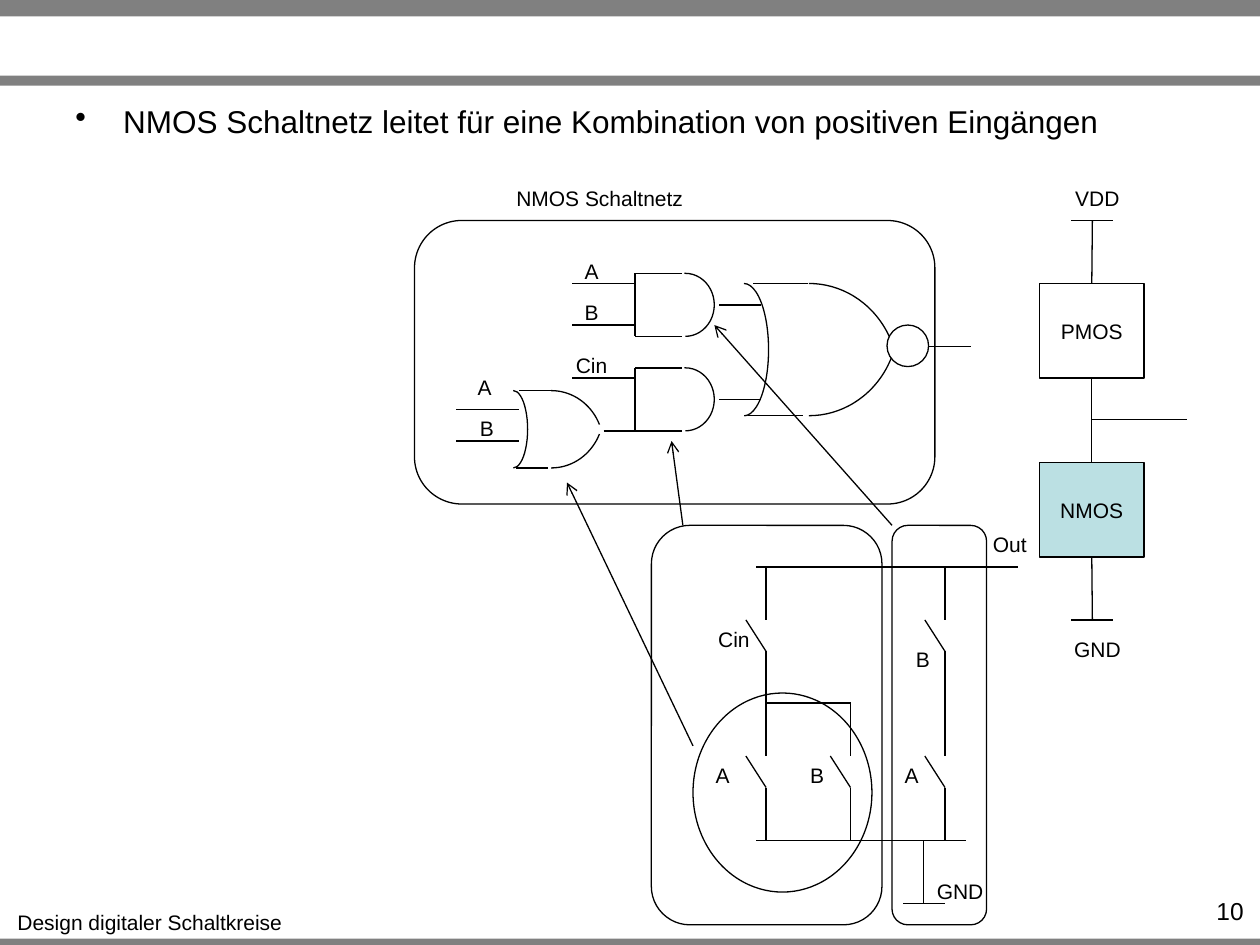
from lxml import etree
from pptx import Presentation
from pptx.dml.color import RGBColor
from pptx.enum.shapes import MSO_CONNECTOR, MSO_SHAPE as SHAPE
from pptx.enum.text import MSO_ANCHOR, PP_ALIGN as ALIGN
from pptx.oxml.ns import qn
from pptx.util import Inches, Pt

COLORS = {"ink": "000000", "bar": "808080", "paper": "FFFFFF", "highlight": "BBE0E3"}
FONT = "Arial"

BULLET = "NMOS Schaltnetz leitet für eine Kombination von positiven Eingängen"
BARS = [(0, 0.13), (0.6, 0.08), (7.45, 0.08)]  # top, height

# text, left, top, width
LABELS = [
    ("Design digitaler Schaltkreise", 0.03, 7.17, 2.32),
    ("NMOS Schaltnetz", 3.99, 1.42, 1.54),
    ("A", 4.54, 2, 0.31), ("B", 4.54, 2.33, 0.31), ("Cin", 4.47, 2.75, 0.45),
    ("A", 3.69, 2.92, 0.31), ("B", 3.71, 3.25, 0.31),
    ("A", 5.58, 6, 0.31), ("B", 6.33, 6, 0.31), ("Cin", 5.6, 4.92, 0.45),
    ("A", 7.08, 6, 0.31), ("B", 7.17, 5.08, 0.31),
    ("Out", 7.78, 4.17, 0.47), ("GND", 7.33, 6.92, 0.58),
    ("VDD", 8.43, 1.42, 0.56), ("GND", 8.42, 5, 0.58),
]

AND_GATES = [(5.04, 2.17), (5.04, 2.92)]  # left, top
OR_GATES = [(5.71, 2.25, 1), (3.96, 3.1, 0.585)]  # left, top, scale
SWITCHES = [(6.08, 4.92), (6.08, 6), (6.75, 6), (7.5, 4.92), (7.5, 6)]

# left, right, y
HORIZONTAL_WIRES = [
    (4.54, 5.04, 2.25), (4.54, 5.04, 2.58), (4.54, 5.04, 3),  # AND inputs
    (3.62, 4.12, 3.25), (3.62, 4.12, 3.5),  # OR inputs
    (4.79, 5.04, 3.42), (5.71, 6.04, 2.42), (5.71, 6.04, 3.17),  # between gates
    (7.37, 7.71, 2.75),  # gate output
    (6, 8.08, 4.5), (6.08, 6.75, 5.58), (6, 7.67, 6.67), (7.17, 7.5, 7.17),
    (8.5, 8.83, 1.75), (8.67, 9.42, 3.33), (8.5, 8.83, 4.92),  # inverter stack
]

FRAMES = [
    (SHAPE.ROUNDED_RECTANGLE, 3.29, 1.75, 4.13, 2.25),
    (SHAPE.OVAL, 5.5, 5.5, 1.42, 1.58),
    (SHAPE.ROUNDED_RECTANGLE, 5.17, 4.17, 1.83, 3.17),
    (SHAPE.ROUNDED_RECTANGLE, 7.08, 4.17, 0.75, 3.17),
]
ARROWS = [(5.5, 5.92, 4.5, 3.83), (5.42, 4.17, 5.33, 3.5), (7.08, 4.17, 5.67, 2.58)]

presentation = Presentation()
presentation.slide_width, presentation.slide_height = Inches(10), Inches(7.5)
slide = presentation.slides.add_slide(presentation.slide_layouts[6])


def color(name):
    return RGBColor.from_string(COLORS[name])


def style_text(paragraph, size, align):
    paragraph.alignment = align
    paragraph.font.name = FONT
    paragraph.font.size = Pt(size)
    paragraph.font.color.rgb = color("ink")


def add_text(text, left, top, width, height=0.3, size=12, align=ALIGN.CENTER, wrap=False):
    box = slide.shapes.add_textbox(*map(Inches, (left, top, width, height)))
    box.text_frame.word_wrap = wrap
    paragraph = box.text_frame.paragraphs[0]
    paragraph.text = text
    style_text(paragraph, size, align)
    return paragraph


def add_shape(kind, left, top, width, height, fill=None, outlined=True):
    shape = slide.shapes.add_shape(kind, *map(Inches, (left, top, width, height)))
    shape.shadow.inherit = False
    if fill:
        shape.fill.solid()
        shape.fill.fore_color.rgb = color(fill)
    else:
        shape.fill.background()
    if outlined:
        shape.line.color.rgb = color("ink")
        shape.line.width = Pt(0.75)
    else:
        shape.line.fill.background()
    return shape


def add_arc(left, top, width, height, end, flipped=False):
    arc = add_shape(SHAPE.ARC, left, top, width, height)
    arc.adjustments[0], arc.adjustments[1] = 162, end
    if flipped:
        arc.element.spPr.find(qn("a:xfrm")).set("flipV", "1")


def add_line(x1, y1, x2, y2, arrow=False):
    line = slide.shapes.add_connector(MSO_CONNECTOR.STRAIGHT, *map(Inches, (x1, y1, x2, y2)))
    line.line.color.rgb = color("ink")
    line.line.width = Pt(0.75)
    if arrow:
        etree.SubElement(line.line._get_or_add_ln(), qn("a:tailEnd"), type="arrow")
    etree.SubElement(line.element.spPr, qn("a:effectLst"))
    return line


def add_and_gate(left, top):
    for y in (top, top + 0.5):
        add_line(left, y, left + 0.37, y)
    add_line(left, top, left, top + 0.5)
    add_arc(left + 0.17, top, 0.46, 0.5, 54.9, flipped=True)


def add_or_gate(left, top, scale):
    height, front_width, front_height = 1.05 * scale, 1.42 * scale, 1.5 * scale
    bottom = top + height
    add_arc(left, top, 0.39 * scale, height, 53.88)
    add_arc(left, top, front_width, front_height, 201.69)
    add_arc(left, bottom - front_height, front_width, front_height, 201.69, flipped=True)
    for start, end, y in ((0.27, 0.7, top), (0.23, 0.66, bottom)):
        add_line(left + start * scale, y, left + end * scale, y)


def add_switch(x, top):
    pivot = top + 0.25
    add_line(x, top - 0.42, x, top)
    add_line(x, pivot, x - 0.16, top)
    add_line(x, pivot, x, pivot + 0.42)


def add_block(text, top, fill=None):
    block = add_shape(SHAPE.RECTANGLE, 8.25, top, 0.83, 0.75, fill)
    block.text_frame.vertical_anchor = MSO_ANCHOR.MIDDLE
    paragraph = block.text_frame.paragraphs[0]
    paragraph.text = text
    style_text(paragraph, 12, ALIGN.CENTER)
    return block


# Bars, bullet and page number
for top, height in BARS:
    add_shape(SHAPE.RECTANGLE, 0, top, 10, height, "bar", outlined=False)

bullet = add_text(BULLET, 0.5, 0.76, 9, 0.74, 18, ALIGN.LEFT, wrap=True)
properties = bullet._p.get_or_add_pPr()
properties.set("marL", str(Inches(0.38)))
properties.set("indent", str(Inches(-0.38)))
properties.insert(0, properties.makeelement(qn("a:buChar"), {"char": "•"}))
add_text("10", 9.1, 7.06, 0.87, 0.24, 14, ALIGN.RIGHT, wrap=True)

# Gates, switches and wires
for gate in AND_GATES:
    add_and_gate(*gate)
for gate in OR_GATES:
    add_or_gate(*gate)
for switch in SWITCHES:
    add_switch(*switch)
for left, right, y in HORIZONTAL_WIRES:
    add_line(left, y, right, y)
add_line(7.33, 6.67, 7.33, 7.17)

# Inverter stack
pmos = add_block("PMOS", 2.25)
nmos = add_block("NMOS", 3.67, "highlight")
add_line(8.67, 1.75, 8.67, 2.25).end_connect(pmos, 0)
middle = add_line(8.67, 3, 8.67, 3.67)
middle.begin_connect(pmos, 2)
middle.end_connect(nmos, 0)
add_line(8.67, 4.42, 8.67, 4.92).begin_connect(nmos, 2)

# Frames, arrows and inverting bubble
for frame in FRAMES:
    add_shape(*frame)
for arrow in ARROWS:
    add_line(*arrow, arrow=True)
add_shape(SHAPE.OVAL, 7.04, 2.58, 0.33, 0.33, "paper")

# Labels
for label in LABELS:
    add_text(*label)

presentation.save("out.pptx")
